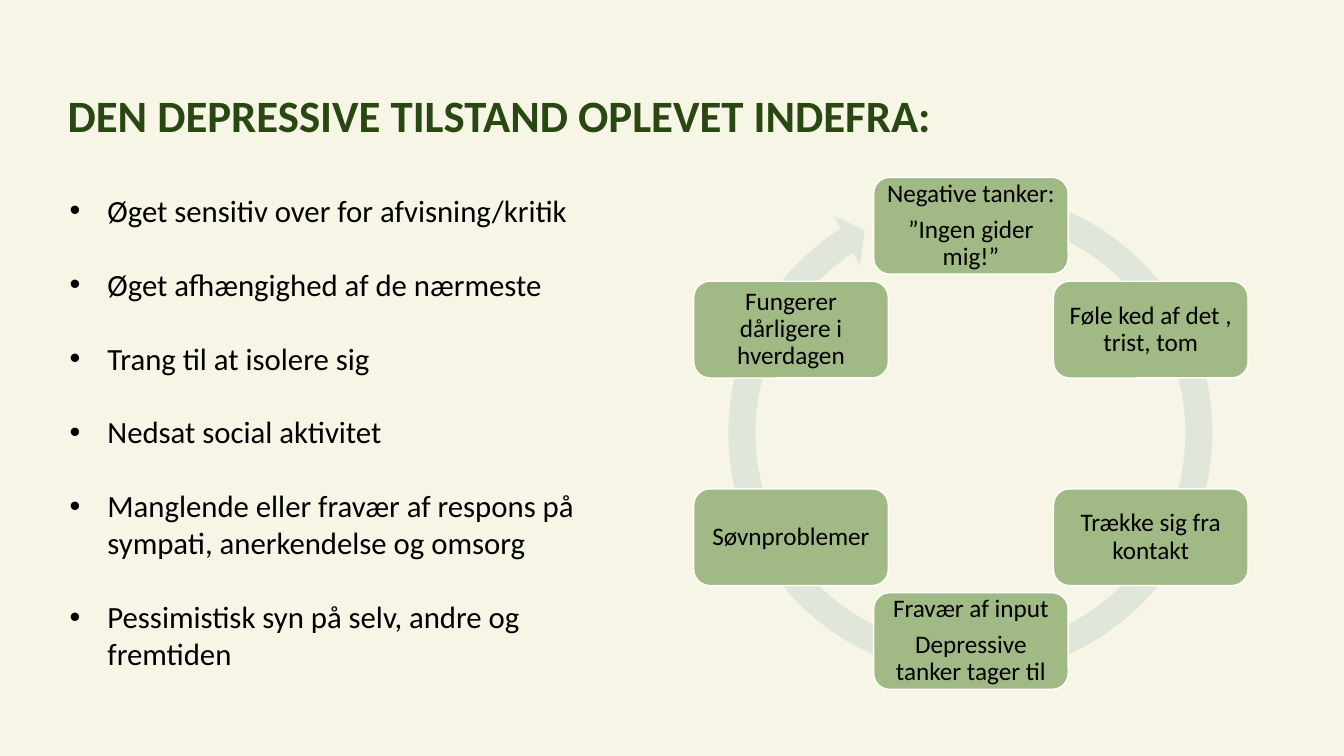
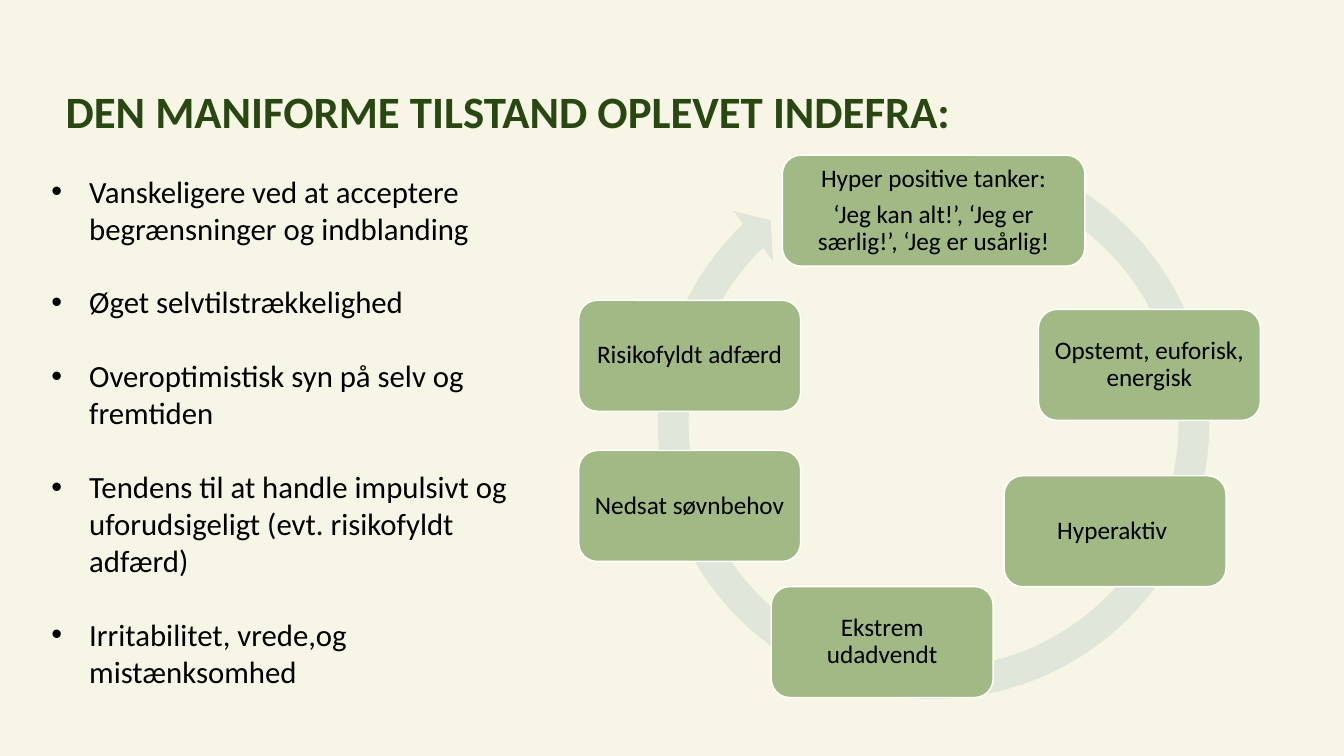
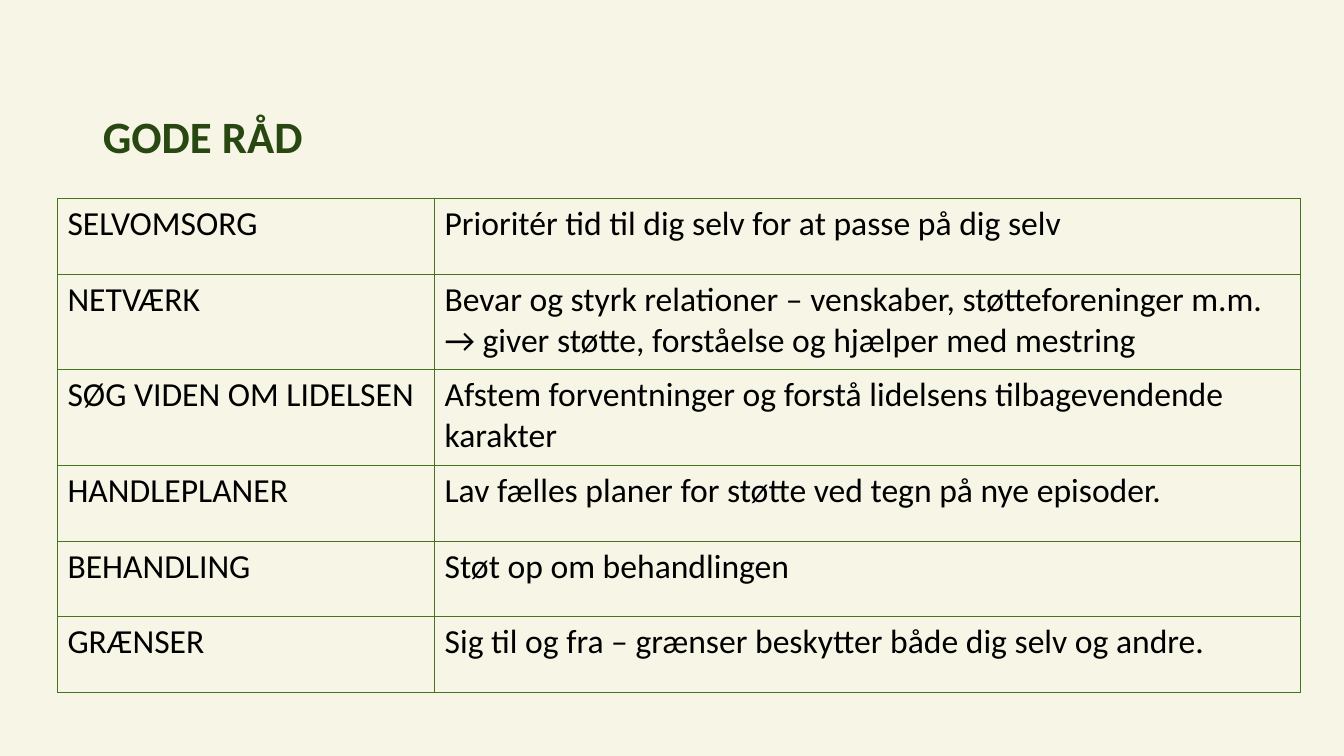
from math import cos, radians, sin

from lxml.etree import SubElement
from pptx import Presentation
from pptx.dml.color import RGBColor
from pptx.enum.shapes import MSO_SHAPE as Shape
from pptx.enum.text import MSO_ANCHOR as Anchor, MSO_AUTO_SIZE as AutoSize, PP_ALIGN as Align
from pptx.oxml.ns import qn
from pptx.util import Pt

PX = 9144  # EMU per px, 100 px to the inch
FONT = "Calibri"
COLORS = {
    "paper": "F7F6E6",
    "title": "294711",
    "text": "000000",
    "ring": "E0E6D9",
    "station": "A1B985",
    "outline": "FFFFFF",
    "grid": "44741C",
}
TITLE_AND_BODY, TITLE_ONLY = 1, 5

DEPRESSIVE_SIGNS = [
    "Øget sensitiv over for afvisning/kritik",
    "Øget afhængighed af de nærmeste",
    "Trang til at isolere sig",
    "Nedsat social aktivitet",
    "Manglende eller fravær af respons på sympati, anerkendelse og omsorg",
    "Pessimistisk syn på selv, andre og fremtiden",
]
DEPRESSIVE_CYCLE = [
    ["Negative tanker:", "”Ingen gider mig!”"],
    ["Føle ked af det , trist, tom"],
    ["Trække sig fra kontakt"],
    ["Fravær af input", "Depressive tanker tager til"],
    ["Søvnproblemer"],
    ["Fungerer dårligere i hverdagen"],
]
MANIC_SIGNS = [
    "Vanskeligere ved at acceptere begrænsninger og indblanding",
    "Øget selvtilstrækkelighed",
    "Overoptimistisk syn på selv og fremtiden",
    "Tendens til at handle impulsivt og uforudsigeligt (evt. risikofyldt adfærd)",
    "Irritabilitet, vrede,og mistænksomhed",
]
MANIC_CYCLE = [
    ["Hyper positive tanker:", "‘Jeg kan alt!’, ‘Jeg er særlig!’, ‘Jeg er usårlig!"],
    ["Opstemt, euforisk, energisk"],
    ["Hyperaktiv "],
    ["Ekstrem udadvendt"],
    ["Nedsat søvnbehov"],
    ["Risikofyldt adfærd"],
]
MANIC_BOXES = [(776, 154, 300, 110)] + [
    (left, top, 220, 110)
    for left, top in [(1030, 307), (996, 472), (765, 582), (574, 447), (574, 298)]
]
ADVICE = [
    ("SELVOMSORG", "Prioritér tid til dig selv for at passe på dig selv"),
    ("NETVÆRK", "Bevar og styrk relationer – venskaber, støtteforeninger m.m. "
                "→ giver støtte, forståelse og hjælper med mestring"),
    ("SØG VIDEN OM LIDELSEN",
     "Afstem forventninger og forstå lidelsens tilbagevendende karakter"),
    ("HANDLEPLANER", "Lav fælles planer for støtte ved tegn på nye episoder."),
    ("BEHANDLING", "Støt op om behandlingen"),
    ("GRÆNSER", "Sig til og fra – grænser beskytter både dig selv og andre."),
]


def color(name):
    return RGBColor.from_string(COLORS[name])


def emu(box):
    return [round(length * PX) for length in box]


def place(shape, box):
    shape.left, shape.top, shape.width, shape.height = emu(box)


def write(frame, lines, size, ink="text", bold=False, align=Align.LEFT, spacing=1.0, gap=0):
    """Fill a text frame, one paragraph a line, with gap points between them."""
    for index, line in enumerate(lines):
        para = frame.paragraphs[0] if index == 0 else frame.add_paragraph()
        para.text = line
        para.alignment = align
        para.line_spacing = spacing
        para.space_before = Pt(gap if index else 0)
        para.space_after = Pt(0)
        font = para.font
        font.name, font.size, font.bold = FONT, Pt(size), bold
        font.color.rgb = color(ink)


def add_page(deck, layout, title, box):
    page = deck.slides.add_slide(deck.slide_layouts[layout])
    heading = page.shapes.title
    place(heading, box)
    frame = heading.text_frame
    frame.vertical_anchor = Anchor.MIDDLE
    frame.auto_size = AutoSize.NONE
    write(frame, [title], 32, "title", bold=True, spacing=0.9)
    return page


def add_bullets(page, box, lines):
    body = page.placeholders[1]
    place(body, box)
    body.text_frame.auto_size = AutoSize.NONE
    body.text_frame.vertical_anchor = Anchor.TOP
    write(body.text_frame, lines, 22, gap=26.4)


def add_plain_shape(page, kind, box, fill):
    shape = page.shapes.add_shape(kind, *emu(box))
    shape.shadow.inherit = False
    shape.fill.solid()
    shape.fill.fore_color.rgb = color(fill)
    return shape


def add_ring(page, box, end, start):
    """Draw the circular arrow from start to end, both in degrees."""
    ring = add_plain_shape(page, Shape.CIRCULAR_ARROW, box, "ring")
    ring.line.fill.background()
    for index, value in enumerate([0.05274, 5.21 * 0.6, end * 0.6, start * 0.6, 0.05477]):
        ring.adjustments[index] = value


def add_station(page, box, lines):
    station = add_plain_shape(page, Shape.ROUNDED_RECTANGLE, box, "station")
    station.line.color.rgb = color("outline")
    station.line.width = Pt(1)
    frame = station.text_frame
    frame.word_wrap = True
    frame.vertical_anchor = Anchor.MIDDLE
    frame.margin_left = frame.margin_right = frame.margin_top = frame.margin_bottom = 7 * PX
    write(frame, lines, 18, align=Align.CENTER, spacing=0.9, gap=6)


def boxes_on_circle(center_x, center_y, radius, width, height, count):
    """Give equally spaced boxes, clockwise from the top."""
    angles = [radians(360 * index / count) for index in range(count)]
    return [
        (center_x + radius * sin(angle) - width / 2,
         center_y - radius * cos(angle) - height / 2, width, height)
        for angle in angles
    ]


def add_cycle(page, ring_box, end, start, boxes, labels):
    add_ring(page, ring_box, end, start)
    for box, lines in zip(boxes, labels):
        add_station(page, box, lines)


def add_borders(cell):
    properties = cell._tc.get_or_add_tcPr()
    for side in ("lnL", "lnR", "lnT", "lnB"):
        line = SubElement(properties, qn(f"a:{side}"), w=str(Pt(0.75)))
        fill = SubElement(line, qn("a:solidFill"))
        SubElement(fill, qn("a:srgbClr"), val=COLORS["grid"])


def add_advice_table(page, box, widths, heights):
    table = page.shapes.add_table(len(heights), len(widths), *emu(box)).table
    table.first_row = table.horz_banding = False
    for column, width in zip(table.columns, widths):
        column.width = width * PX
    for row, height, texts in zip(table.rows, heights, ADVICE):
        row.height = height * PX
        for cell, text in zip(row.cells, texts):
            add_borders(cell)
            cell.fill.background()
            write(cell.text_frame, [text], 24)


def main():
    deck = Presentation()
    deck.slide_width, deck.slide_height = 1333 * PX, 750 * PX
    background = deck.slide_master.background.fill
    background.solid()
    background.fore_color.rgb = color("paper")

    page = add_page(deck, TITLE_AND_BODY, "DEN DEPRESSIVE TILSTAND OPLEVET INDEFRA:",
                    (57, 74, 1220, 87))
    add_bullets(page, (59, 185, 579, 491), DEPRESSIVE_SIGNS)
    add_cycle(page, (708, 175, 509, 509), 237.25, 285.39,
              boxes_on_circle(963, 430, 206, 193, 96, 6), DEPRESSIVE_CYCLE)

    page = add_page(deck, TITLE_AND_BODY, "DEN MANIFORME TILSTAND OPLEVET INDEFRA:",
                    (55, 71, 1150, 84))
    add_bullets(page, (41, 166, 515, 528), MANIC_SIGNS)
    add_cycle(page, (636, 130, 580, 580), 226.08, 292.12, MANIC_BOXES, MANIC_CYCLE)

    page = add_page(deck, TITLE_ONLY, "GODE RÅD", (92, 96, 1150, 84))
    add_advice_table(page, (57, 197, 1233, 490), (374, 859), (75, 95, 95, 75, 75, 75))

    deck.save("out.pptx")


if __name__ == "__main__":
    main()
